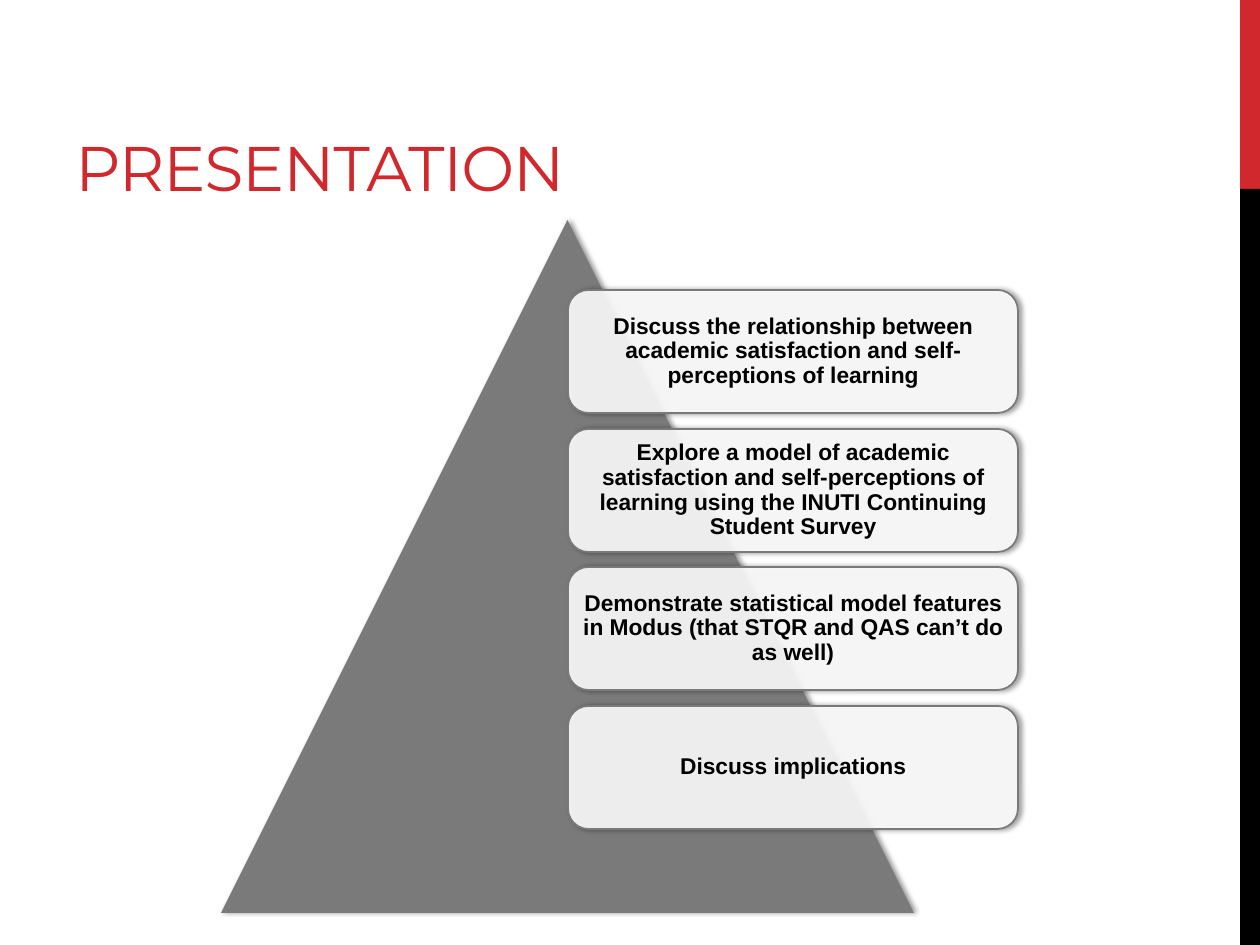
from lxml import etree
from pptx import Presentation
from pptx import util as u
from pptx.dml.color import RGBColor
from pptx.enum import shapes, text
from pptx.oxml import ns

EMU_PER_PX = 914400 / 126
RED = RGBColor(0xD1, 0x28, 0x2E)
BLACK = RGBColor(0, 0, 0)
GRAY = RGBColor(0x7A, 0x7A, 0x7A)
WHITE = RGBColor(0xFF, 0xFF, 0xFF)
GOALS = [
    "Discuss the relationship between academic satisfaction and self-perceptions of learning",
    "Explore a model of academic satisfaction and self-perceptions of "
    "learning using the INUTI Continuing Student Survey",
    "Demonstrate statistical model features in Modus (that STQR and QAS can’t do as well)",
    "Discuss implications",
]


def px(length):
    """Turn pixels into EMU."""
    return u.Emu(round(length * EMU_PER_PX))


def assign(target, values):
    """Set each attribute named in a dict."""
    for name, value in values.items():
        setattr(target, name, value)


def add_child(parent, tag, **attributes):
    """Append a DrawingML element."""
    return etree.SubElement(parent, ns.qn(tag), attributes)


def add_figure(page, kind, box, fill, line=None):
    """Draw a preset shape with a flat fill and an optional outline."""
    figure = page.shapes.add_shape(kind, *map(px, box))
    figure.shadow.inherit = False
    figure.fill.solid()
    figure.fill.fore_color.rgb = fill
    if line is None:
        figure.line.fill.background()
    else:
        figure.line.color.rgb = line
        figure.line.width = u.Pt(1)
    return figure


def add_shadow(figure):
    """Cast a soft shadow to the right."""
    effects = figure.element.spPr.find(ns.qn("a:effectLst"))
    shadow = add_child(effects, "a:outerShdw", blurRad=str(u.Pt(3.1)),
                       dist=str(u.Pt(1.8)), dir="0", rotWithShape="0")
    color = add_child(shadow, "a:srgbClr", val=str(BLACK))
    add_child(color, "a:alpha", val="40000")


def write(shape, words, frame_format, para_format, font_format, color):
    """Fill a shape with one formatted paragraph and return its span."""
    frame = shape.text_frame
    assign(frame, {"word_wrap": True, **frame_format})
    para = frame.paragraphs[0]
    assign(para, para_format)
    span = para.add_run()
    span.text = words
    assign(span.font, font_format)
    span.font.color.rgb = color
    return span


def add_side_band(page, box):
    """Draw the red and black band at the page edge."""
    left, top, width, height = box
    red_height = height // 5
    add_figure(page, shapes.MSO_SHAPE.RECTANGLE, (left, top, width, red_height), RED)
    add_figure(page, shapes.MSO_SHAPE.RECTANGLE,
               (left, top + red_height, width, height - red_height), BLACK)


def add_title(page, box):
    """Place the page title at the bottom of its box."""
    title = page.shapes.add_textbox(*map(px, box))
    span = write(title, "PRESENTATION",
                 {"vertical_anchor": text.MSO_ANCHOR.BOTTOM},
                 {"alignment": text.PP_ALIGN.LEFT},
                 {"name": "Montserrat", "size": u.Pt(36)}, RED)
    span.font._element.set("spc", "-60")


def add_goal(page, box, words):
    """Draw one translucent goal card."""
    card = add_figure(page, shapes.MSO_SHAPE.ROUNDED_RECTANGLE, box, WHITE, GRAY)
    add_shadow(card)
    color = card.element.spPr.find(ns.qn("a:solidFill"))[0]
    add_child(color, "a:alpha", val="90000")
    margins = {f"margin_{side}": px(6) for side in ("left", "top", "right", "bottom")}
    write(card, words,
          {"vertical_anchor": text.MSO_ANCHOR.MIDDLE, **margins},
          {"alignment": text.PP_ALIGN.CENTER, "line_spacing": 0.9},
          {"name": "Arial", "size": u.Pt(13), "bold": True}, BLACK)


def add_pyramid(page, box):
    """Draw the triangle and the goal cards that start at its axis."""
    left, top, width, height = box
    add_shadow(add_figure(page, shapes.MSO_SHAPE.ISOSCELES_TRIANGLE, box, GRAY))
    card_left, first_top = left + round(width * 0.5 + 0.5), top + 70
    card_width, card_height = width * 65 // 100, 123
    for index, words in enumerate(GOALS):
        card_top = first_top + round(index * height / 5)
        add_goal(page, (card_left, card_top, card_width, card_height), words)


def main():
    """Build the deck."""
    deck = Presentation()
    assign(deck, {"slide_width": px(1260), "slide_height": px(945)})
    page = deck.slides.add_slide(deck.slide_layouts[6])
    add_side_band(page, (1240, 0, 20, 945))
    add_title(page, (63, 21, 798, 189))
    add_pyramid(page, (221, 220, 693, 693))
    deck.save("out.pptx")


if __name__ == "__main__":
    main()
